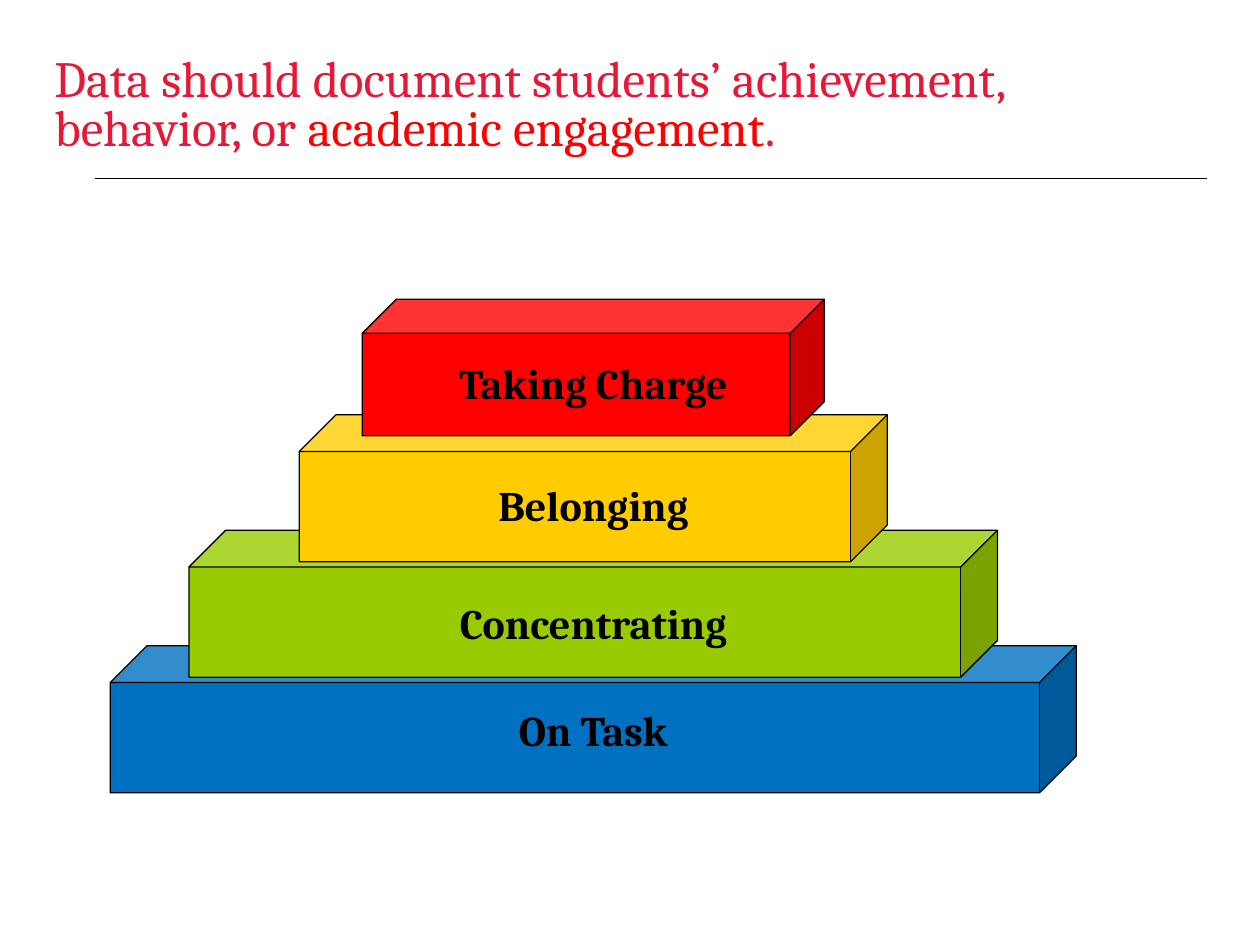
import pptx
import pptx.util
import pptx.dml.color
import pptx.enum.shapes
import pptx.enum.text
import pptx.oxml.ns
from lxml import etree

COLUMNS, ROWS = 240, 180
CELL = pptx.util.Inches(10) // COLUMNS
FONT = "Cambria"
COLORS = {
    "title": "E51837",
    "accent": "FF0000",
    "ink": "000000",
    "blue": "0070C0",
    "green": "99CC00",
    "yellow": "FFCC00",
    "red": "FF0000",
}

# Bottom step first: label, colour, width, height, label width, label drop, line spacing
STEPS = [
    ("On Task", "blue", 184, 28, 178, 10, 1.0),
    ("Concentrating", "green", 154, 28, 144, 13.5, 0.8),
    ("Belonging", "yellow", 112, 28, 122, 13, 0.8),
    ("Taking Charge", "red", 88, 26, 86, 10, 1.0),
]
STEP_RISE = 22
LABEL_HEIGHT = 12


def rgb(name):
    return pptx.dml.color.RGBColor.from_string(COLORS[name])


def cells(*counts):
    return [round(count * CELL) for count in counts]


def add_text(page, box, spans, size, spacing, bold=False, align=None):
    """Place one wrapped paragraph made of (text, colour) spans."""
    text_box = page.shapes.add_textbox(*cells(*box))
    text_box.text_frame.word_wrap = True
    para = text_box.text_frame.paragraphs[0]
    para.line_spacing = spacing
    para.alignment = align
    para.font.name = FONT
    para.font.size = pptx.util.Pt(size)
    para.font.bold = bold
    for text, color in spans:
        span = para.add_run()
        span.text = text
        span.font.color.rgb = rgb(color)


def add_header(page, box):
    """Title with a thin rule beneath it."""
    left, top, width, height = box
    spans = [
        ("Data should document students’ achievement, behavior, or ", "title"),
        ("academic engagement", "accent"),
        (".", "title"),
    ]
    add_text(page, (left, top, width, height), spans, 29, 0.8)

    # Rule, indented from the title and running past its right edge
    rule_top = top + 24
    rule = page.shapes.add_connector(
        pptx.enum.shapes.MSO_CONNECTOR.STRAIGHT,
        *cells(left + 10, rule_top, left + width + 4, rule_top))
    rule.line.color.rgb = rgb("ink")
    rule.line.width = pptx.util.Pt(0.75)
    etree.SubElement(rule._element.spPr, pptx.oxml.ns.qn("a:effectLst"))


def add_pyramid(page, box):
    """Centred stack of blocks, each overlapping the one below."""
    left, top, width, height = box
    center = left + width / 2
    base = top + height - STEPS[0][3]
    tops = [base - STEP_RISE * level for level in range(len(STEPS))]

    # Blocks, from the bottom up
    for step_top, (_, color, step_width, step_height, *_) in zip(tops, STEPS):
        block = page.shapes.add_shape(
            pptx.enum.shapes.MSO_SHAPE.CUBE,
            *cells(center - step_width / 2, step_top, step_width, step_height))
        block.adjustments[0] = 0.25
        block.shadow.inherit = False
        block.fill.solid()
        block.fill.fore_color.rgb = rgb(color)
        block.line.color.rgb = rgb("ink")
        block.line.width = pptx.util.Pt(0.75)

    # Labels, in front of all blocks
    for step_top, (label, _, _, _, label_width, drop, spacing) in zip(tops, STEPS):
        label_box = (center - label_width / 2, step_top + drop, label_width, LABEL_HEIGHT)
        add_text(page, label_box, [(label, "ink")], 24, spacing, bold=True,
                 align=pptx.enum.text.PP_ALIGN.CENTER)


def main():
    deck = pptx.Presentation()
    deck.slide_width, deck.slide_height = cells(COLUMNS, ROWS)
    page = deck.slides.add_slide(deck.slide_layouts[6])
    add_header(page, (8, 10, 218, 26))
    add_pyramid(page, (21, 57, 184, 94))
    deck.save("out.pptx")


if __name__ == "__main__":
    main()
